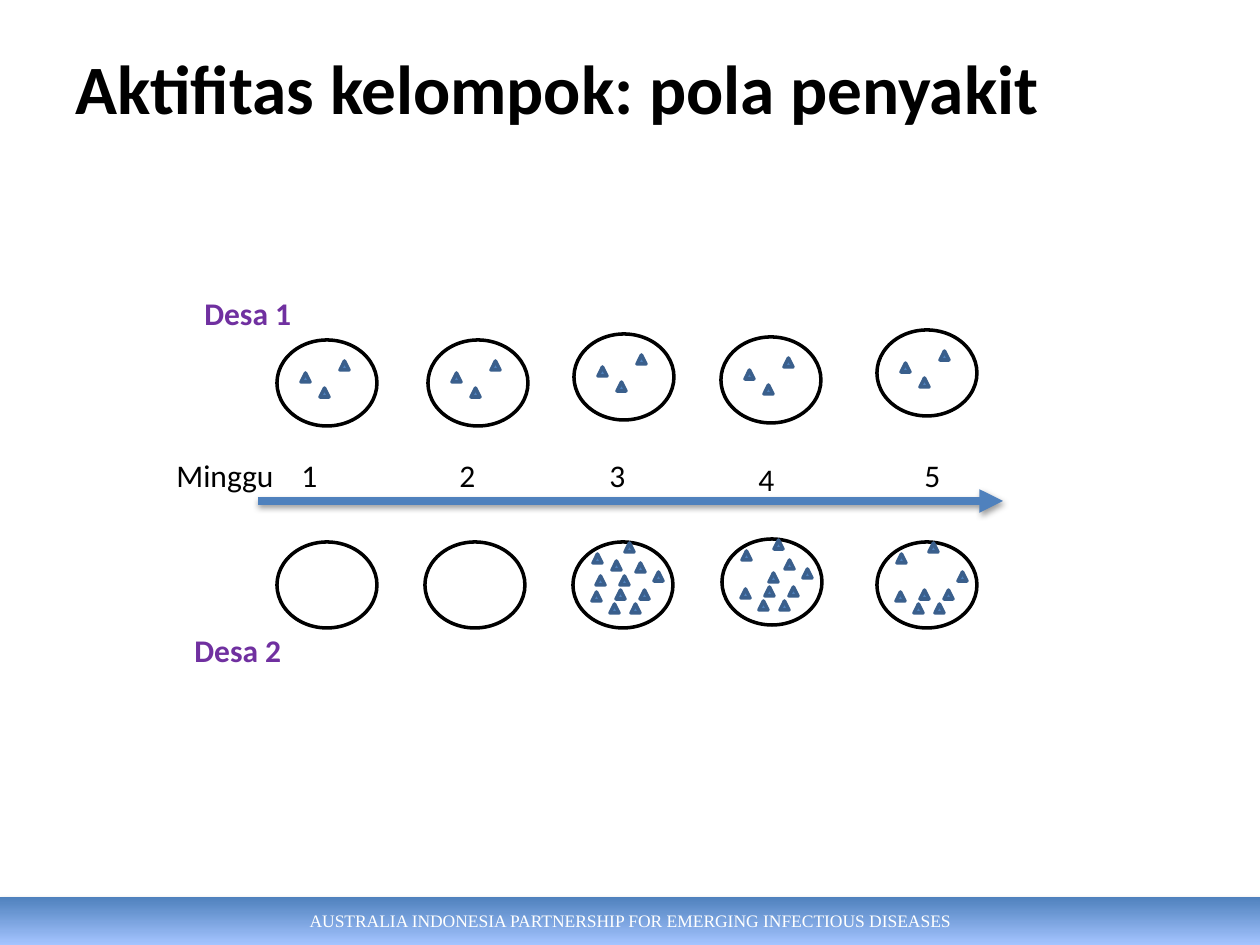
from lxml.etree import SubElement
from pptx import Presentation
from pptx.dml.color import RGBColor
from pptx.enum.shapes import MSO_CONNECTOR, MSO_SHAPE
from pptx.enum.text import MSO_ANCHOR, MSO_AUTO_SIZE, PP_ALIGN
from pptx.oxml.ns import qn
from pptx.util import Emu, Pt

COLORS = {"ink": "000000", "paper": "FFFFFF", "blue": "4F81BD", "edge": "3A5F8C",
          "light": "A4C4FF", "village": "7030A0"}
PX_PER_INCH = 126


def px(n):
    return Emu(round(n * 914400 / PX_PER_INCH))


def color(name):
    return RGBColor.from_string(COLORS[name])


class SlideBuilder:
    def __init__(self, slide, font="Calibri"):
        self.slide = slide
        self.font = font

    def set_text(self, shape, text, ink="ink", align=PP_ALIGN.LEFT, **style):
        tf = shape.text_frame
        p = tf.paragraphs[0]
        p.alignment = align
        r = p.add_run()
        r.text = text
        for key, value in {"name": self.font, "size": Pt(18), "bold": False, **style}.items():
            setattr(r.font, key, value)
        r.font.color.rgb = color(ink)
        return tf

    def title(self, text, *box, **style):
        s = self.slide.shapes.title
        s.left, s.top, s.width, s.height = map(px, box)
        tf = self.set_text(s, text, **style)
        tf.auto_size = MSO_AUTO_SIZE.NONE
        tf.vertical_anchor = MSO_ANCHOR.MIDDLE

    def label(self, text, *box, **style):
        s = self.slide.shapes.add_textbox(*map(px, box))
        tf = self.set_text(s, text, **style)
        tf.word_wrap = False
        tf.auto_size = MSO_AUTO_SIZE.SHAPE_TO_FIT_TEXT

    def shape(self, kind, *box, fill=None, line=None):
        s = self.slide.shapes.add_shape(kind, *map(px, box))
        s.shadow.inherit = False
        if fill:
            s.fill.solid()
            s.fill.fore_color.rgb = color(fill)
        if line:
            s.line.color.rgb = color(line)
            s.line.width = Pt(2)
        else:
            s.line.fill.background()
        return s

    def shadow(self, shape, opacity, distance):
        sp_pr = shape._element.spPr
        effects = sp_pr.find(qn("a:effectLst"))
        if effects is None:
            effects = SubElement(sp_pr, qn("a:effectLst"))
        outer = SubElement(effects, qn("a:outerShdw"), blurRad=str(Pt(3.1)),
                           dist=str(Pt(distance)), dir="5400000", rotWithShape="0")
        tint = SubElement(outer, qn("a:srgbClr"), val=COLORS["ink"])
        SubElement(tint, qn("a:alpha"), val=str(opacity * 1000))

    def arrow(self, *ends):
        s = self.slide.shapes.add_connector(MSO_CONNECTOR.STRAIGHT, *map(px, ends))
        s.line.color.rgb = color("blue")
        s.line.width = Pt(4.5)
        SubElement(s._element.spPr.find(qn("a:ln")), qn("a:tailEnd"), type="triangle")
        self.shadow(s, 38, 1.6)

    def footer(self, text, *box):
        s = self.shape(MSO_SHAPE.RECTANGLE, *box)
        s.fill.gradient()
        s.fill.gradient_angle = 270
        for stop, name in zip(s.fill.gradient_stops, ("blue", "light")):
            stop.color.rgb = color(name)
        self.shadow(s, 35, 1.8)
        tf = self.set_text(s, text, ink="paper", align=PP_ALIGN.CENTER,
                           name="Times New Roman", size=Pt(10))
        tf.vertical_anchor = MSO_ANCHOR.MIDDLE

    def village(self, left, top, cases):
        self.shape(MSO_SHAPE.OVAL, left, top, 100, 86, fill="paper", line="ink")
        for dx, dy in cases:
            self.shape(MSO_SHAPE.ISOSCELES_TRIANGLE, left + dx, top + dy, 9, 9,
                       fill="blue", line="edge")


# Cases inside a village, as offsets from its circle
STEADY = [(24, 33), (43, 48), (63, 21)]
# Ordered so that each later week keeps a shorter head of the list
OUTBREAK = [(43, 48), (67, 48), (58, 62), (19, 50), (20, 12), (52, 1), (81, 30), (37, 62),
            (63, 21), (47, 34), (23, 34), (39, 19)]

# Per week: label position, Desa 1 circle, Desa 2 circle, Desa 2 case count
WEEKS = [
    ((289, 450), (277, 340), (277, 542), 0),
    ((447, 450), (428, 340), (425, 542), 0),
    ((597, 450), (574, 334), (573, 542), 12),
    ((746, 454), (721, 337), (722, 539), 10),
    ((912, 450), (877, 330), (877, 542), 8),
]


def main():
    prs = Presentation()
    prs.slide_width, prs.slide_height = px(1260), px(945)
    b = SlideBuilder(prs.slides.add_slide(prs.slide_layouts[5]))

    # Frame
    b.footer("AUSTRALIA INDONESIA PARTNERSHIP FOR EMERGING INFECTIOUS DISEASES",
             0, 897, 1260, 48)
    b.title("Aktifitas kelompok: pola penyakit", 63, 38, 1134, 97, size=Pt(39.6), bold=True)

    # Time axis
    b.arrow(258, 501, 1003, 501)
    b.label("Minggu", 164, 450, 123, 50)

    # Weeks with both villages
    for week, (number, desa1, desa2, count) in enumerate(WEEKS, 1):
        b.label(str(week), *number, 42, 50)
        b.village(*desa1, STEADY)
        b.village(*desa2, OUTBREAK[:count])

    # Village names
    for name, left, top in (("Desa 1", 192, 288), ("Desa 2", 182, 625)):
        b.label(name, left, top, 113, 50, ink="village", bold=True)

    prs.save("out.pptx")


if __name__ == "__main__":
    main()
